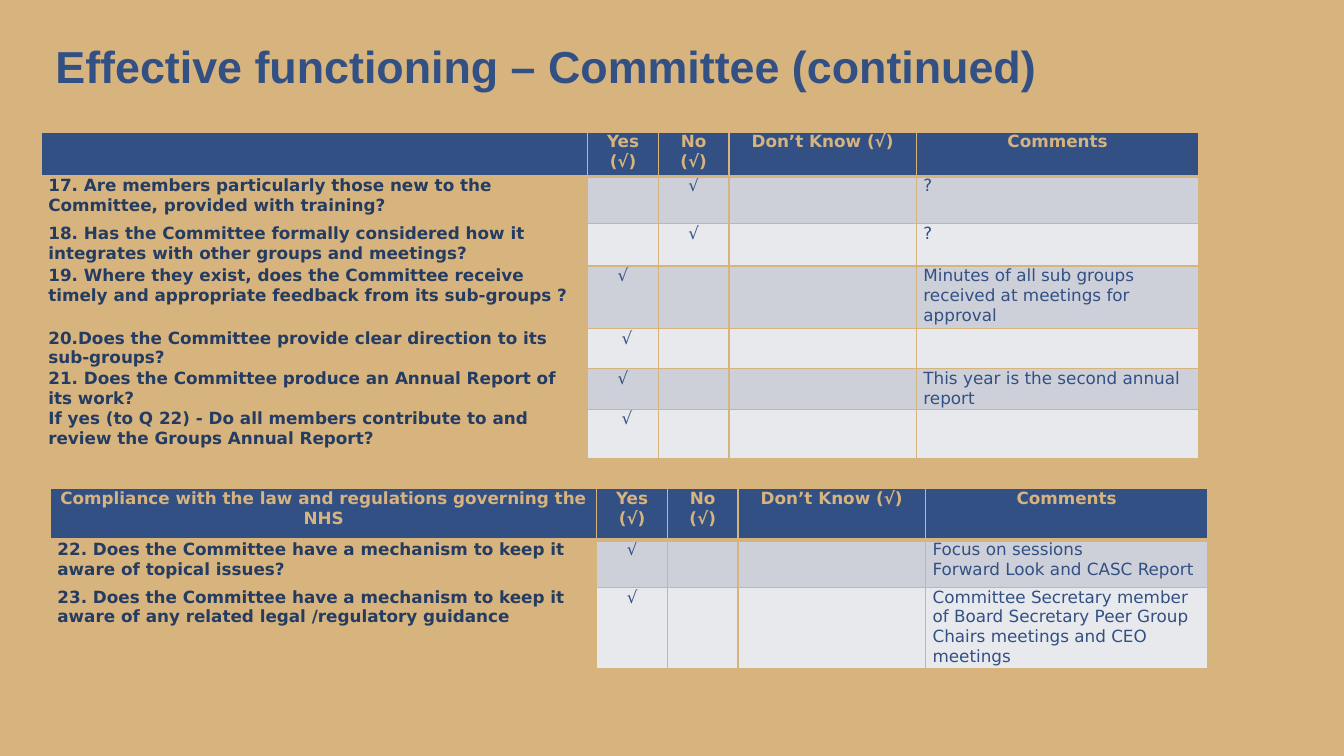
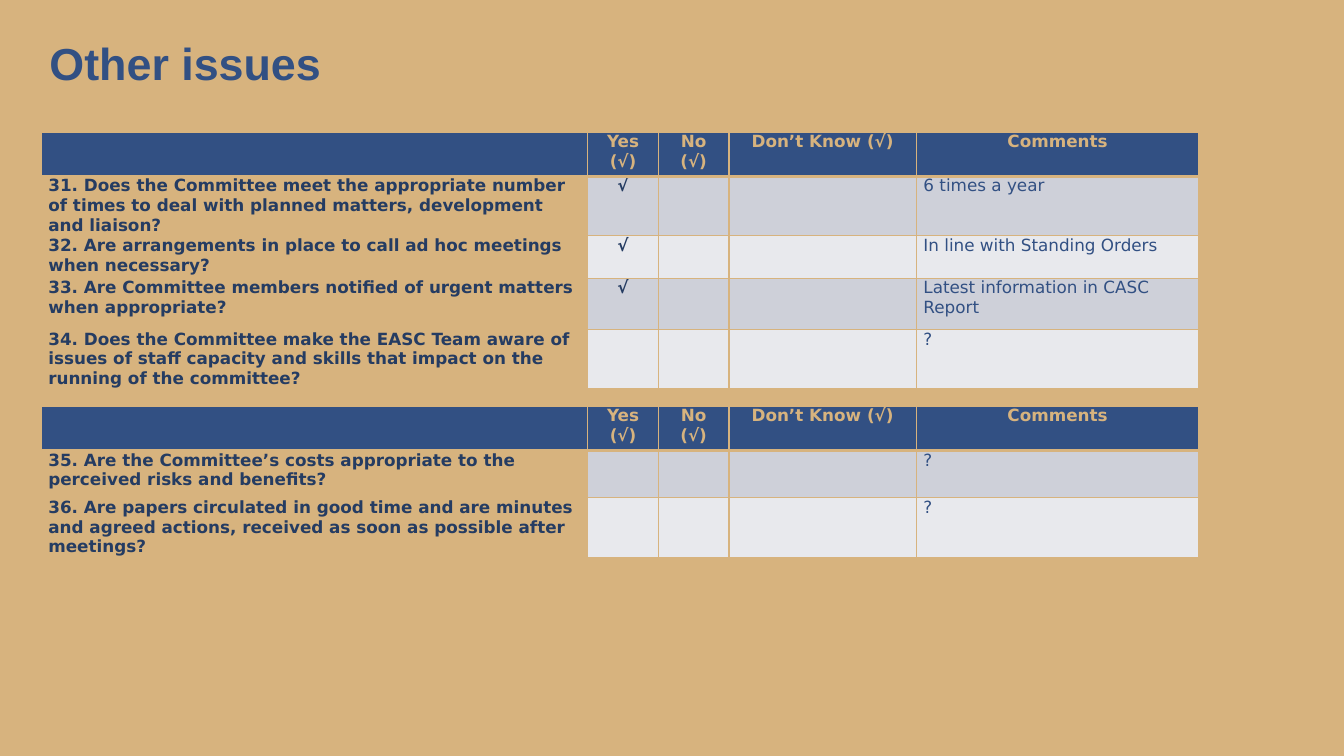
"""Build two committee self-assessment slides with yes/no tables."""
from pptx import Presentation
from pptx.dml.color import RGBColor
from pptx.enum.text import MSO_ANCHOR, MSO_AUTO_SIZE, PP_ALIGN
from pptx.oxml.ns import qn
from pptx.util import Inches, Pt
from lxml import etree

LEFT, CENTER = PP_ALIGN.LEFT, PP_ALIGN.CENTER
MIDDLE = MSO_ANCHOR.MIDDLE
NO_FIT = MSO_AUTO_SIZE.NONE

HUES = {"sand": "D7B37E", "blue": "325083", "navy": "253C62",
        "odd": "CED0D9", "even": "E8E9ED"}
HEADS = ["Yes (√)", "No (√)", "Don’t Know (√)", "Comments"]
COLS = [5.42, 0.7, 0.7, 1.86, 2.8]
YES, NO, NONE = 1, 2, 0

# Each row holds: height, question, ticked column, comment lines, tick indent.
SLIDES = [
    {"title": "Effective functioning – Committee (continued)",
     "at": (0.45, 0.22, 11.57, 0.8), "bold": False, "ink": "blue",
     "tables": [
         {"at": (0.41, 1.31), "head": "", "top": 0.44, "rows": [
             (0.47, "17. Are members particularly those new to the Committee, provided with training?", NO, ["?"], 0),
             (0.42, "18. Has the Committee formally considered how it integrates with other groups and meetings?", NO, ["?"], 0),
             (0.62, "19. Where they exist, does the Committee receive timely and appropriate feedback from its sub-groups ?",
              YES, ["Minutes of all sub groups received at meetings for approval"], 0),
             (0.4, "20.Does the Committee provide clear direction to its sub-groups?", YES, [], 0.08),
             (0.4, "21. Does the Committee produce an Annual Report of its work?",
              YES, ["This year is the second annual report"], 0),
             (0.49, "If yes (to Q 22) - Do all members contribute to and review the Groups Annual Report?", YES, [], 0.08)]},
         {"at": (0.5, 4.85), "head": "Compliance with the law and regulations governing the NHS",
          "top": 0.51, "rows": [
              (0.47, "22. Does the Committee have a mechanism to keep it aware of topical issues?",
               YES, ["Focus on sessions", "Forward Look and CASC Report"], 0),
              (0.8, "23. Does the Committee have a mechanism to keep it aware of any related legal /regulatory guidance",
               YES, ["Committee Secretary member of Board Secretary Peer Group", "Chairs meetings and CEO meetings"], 0)]}]},
    {"title": "Other issues",
     "at": (0.39, 0.19, 11.46, 0.8), "bold": True, "ink": "navy",
     "tables": [
         {"at": (0.41, 1.31), "head": "", "top": 0.44, "rows": [
             (0.59, "31. Does the Committee meet the appropriate number of times to deal with planned matters, development and liaison?",
              YES, ["6 times a year"], 0),
             (0.42, "32. Are arrangements in place to call ad hoc meetings when necessary?", YES, ["In line with Standing Orders"], 0),
             (0.51, "33. Are Committee members notified of urgent matters when appropriate?",
              YES, ["Latest information in CASC Report"], 0),
             (0.59, "34. Does the Committee make the EASC Team aware of issues of staff capacity and skills that impact on the running of the committee?",
              NONE, ["?"], 0)]},
         {"at": (0.41, 4.03), "head": "", "top": 0.44, "rows": [
             (0.47, "35. Are the Committee’s costs appropriate to the perceived risks and benefits?", NONE, ["?"], 0),
             (0.59, "36. Are papers circulated in good time and are minutes and agreed actions, received as soon as possible after meetings?",
              NONE, ["?"], 0)]}]},
]


def paint(fill, hue):
    fill.solid()
    fill.fore_color.rgb = RGBColor.from_string(HUES[hue])


def add_run(para, text, size, face, hue, bold):
    run = para.add_run()
    run.text = text
    font = run.font
    font.size, font.name, font.bold = Pt(size), face, bold
    font.color.rgb = RGBColor.from_string(HUES[hue])


def set_edges(cell, top, base):
    props = cell._tc.get_or_add_tcPr()
    for side, width in (("L", 1), ("R", 1), ("T", top), ("B", base)):
        line = etree.SubElement(props, qn(f"a:ln{side}"), w=str(Pt(width)))
        fill = etree.SubElement(line, qn("a:solidFill"))
        etree.SubElement(fill, qn("a:srgbClr"), val=HUES["sand"])


def fill_cell(cell, lines, back, hue, bold, align, edges, indent=0):
    set_edges(cell, *edges)
    if back:
        paint(cell.fill, back)
    else:
        cell.fill.background()
    cell.margin_left = cell.margin_right = Inches(0.07)
    cell.margin_top = cell.margin_bottom = 0
    frame = cell.text_frame
    for num, text in enumerate(lines):
        para = frame.add_paragraph() if num else frame.paragraphs[0]
        para.alignment = align
        if indent:
            para._p.get_or_add_pPr().set("marL", str(Inches(indent)))
        add_run(para, text, 12, "DejaVu Sans", hue, bold)


def add_grid(slide, data, bold, ink):
    rows = data["rows"]
    highs = [data["top"]] + [row[0] for row in rows]
    left, top = data["at"]
    grid = slide.shapes.add_table(
        len(highs), len(COLS), Inches(left), Inches(top),
        Inches(sum(COLS)), Inches(sum(highs))).table
    grid.horz_banding = False
    for col, width in zip(grid.columns, COLS):
        col.width = Inches(width)
    for row, high in zip(grid.rows, highs):
        row.height = Inches(high)
    for col, text in enumerate([data["head"]] + HEADS):
        fill_cell(grid.cell(0, col), [text] if text else [], "blue", "sand", True, CENTER, (1, 3))
    last = len(COLS) - 1
    for num, (_, ask, tick, notes, indent) in enumerate(rows, 1):
        back = "odd" if num % 2 else "even"
        edges = (3 if num == 1 else 1, 1)
        fill_cell(grid.cell(num, 0), [ask], None, "navy", True, LEFT, edges)
        for col in range(1, last):
            mark = ["√"] if col == tick else []
            fill_cell(grid.cell(num, col), mark, back, ink, bold, CENTER, edges, indent)
        fill_cell(grid.cell(num, last), notes, back, "blue", False, LEFT, edges)


def add_title(slide, text, spot):
    title = slide.shapes.title
    title.left, title.top, title.width, title.height = map(Inches, spot)
    paint(title.fill, "sand")
    frame = title.text_frame
    frame.auto_size, frame.word_wrap = NO_FIT, True
    frame.vertical_anchor = MIDDLE
    para = frame.paragraphs[0]
    para.alignment, para.line_spacing = LEFT, Pt(43)
    add_run(para, text, 32, "Arial", "blue", True)


def main():
    deck = Presentation()
    deck.slide_width, deck.slide_height = Inches(13.33), Inches(7.5)
    paint(deck.slide_master.background.fill, "sand")
    for page in SLIDES:
        slide = deck.slides.add_slide(deck.slide_layouts[5])
        add_title(slide, page["title"], page["at"])
        for data in page["tables"]:
            add_grid(slide, data, page["bold"], page["ink"])
    deck.save("out.pptx")


if __name__ == "__main__":
    main()
